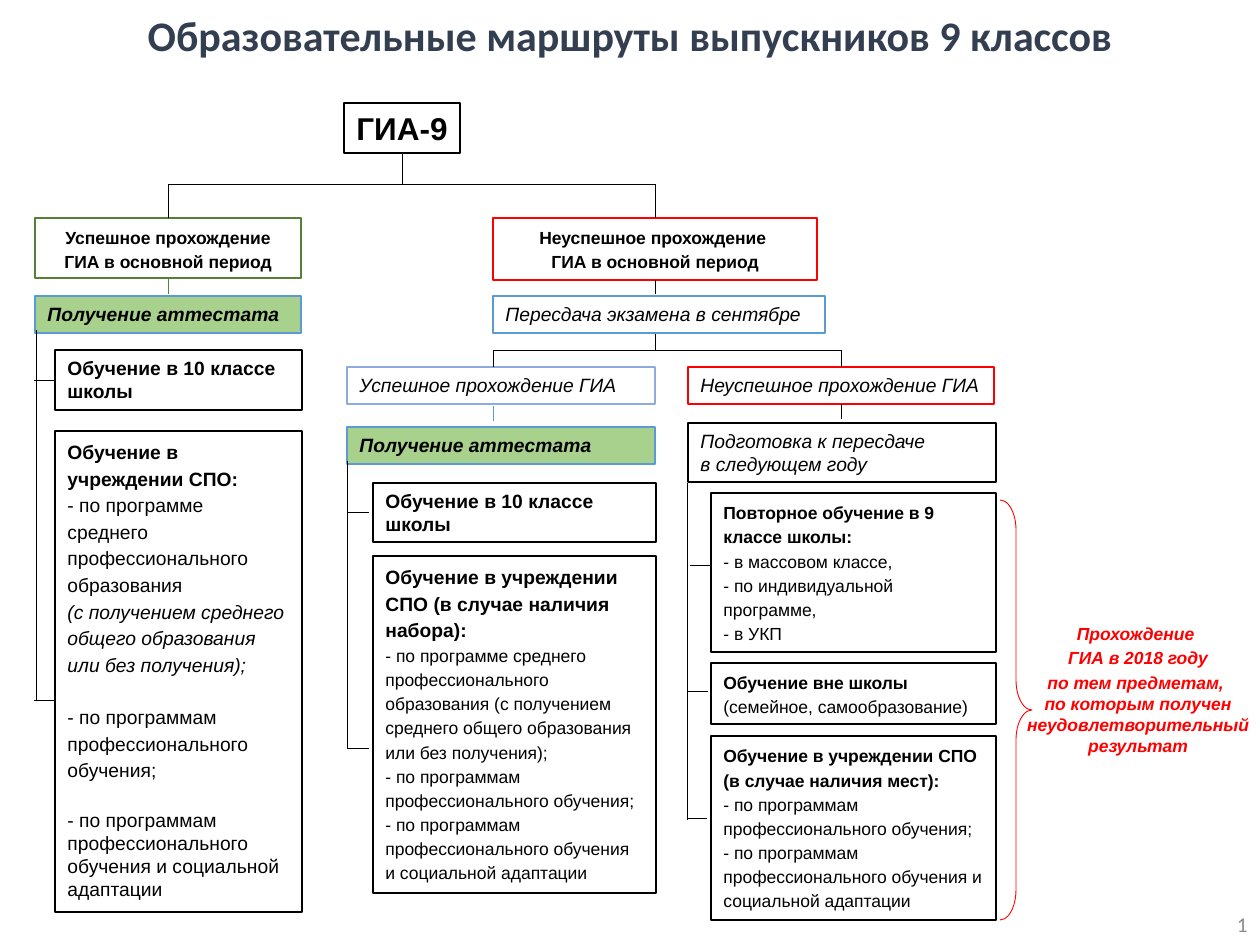
from typing import NamedTuple

from lxml.etree import SubElement
from pptx import Presentation
from pptx.dml.color import RGBColor
from pptx.enum.shapes import MSO_CONNECTOR, MSO_SHAPE
from pptx.enum.text import MSO_ANCHOR, MSO_AUTO_SIZE, PP_ALIGN
from pptx.oxml.ns import qn
from pptx.util import Emu, Pt

BLACK = RGBColor(0, 0, 0)
RED = RGBColor(0xFF, 0, 0)
GREEN = RGBColor(0x54, 0x82, 0x35)
LIGHT_GREEN = RGBColor(0xA9, 0xD1, 0x8E)
BLUE = RGBColor(0x5B, 0x9B, 0xD5)
PALE_BLUE = RGBColor(0x8F, 0xAA, 0xDC)
NAVY = RGBColor(0x33, 0x3F, 0x50)
GREY = RGBColor(0x8C, 0x8C, 0x8C)
TOP, LEFT, BOTTOM = 0, 1, 2
LOOSE = 1.15


class Para(NamedTuple):
    text: str
    style: str = ""  # b = bold, i = italic
    size: int = 10
    spacing: float = LOOSE
    before: int = 0


class Box(NamedTuple):
    place: tuple  # left, top, width, height in px
    paras: list
    line: RGBColor = BLACK
    fill: RGBColor = None
    align: PP_ALIGN = PP_ALIGN.LEFT
    wrap: bool = True


# Content
TITLE = "Образовательные маршруты выпускников 9 классов"
CERTIFICATE = [Para("Получение аттестата", "bi", 11, 1)]
GRADE_10 = [Para("Обучение в 10 классе школы", "b", 11, 1)]
TRAINING = "- по программам профессионального обучения;"
ADAPTATION = "- по программам профессионального обучения и социальной адаптации"

BOXES = {
    "exam": Box((344, 103, 116, 50), [Para("ГИА-9", "b", 18, 1)], wrap=False),
    "passed": Box((35, 218, 266, 60), [
        Para("Успешное прохождение ГИА в основной период", "b")],
        GREEN, align=PP_ALIGN.CENTER),
    "failed": Box((493, 218, 324, 62), [
        Para("Неуспешное прохождение \nГИА в основной период", "b")],
        RED, align=PP_ALIGN.CENTER),
    "certificate": Box((35, 296, 266, 37), CERTIFICATE, BLUE, LIGHT_GREEN),
    "retake": Box((493, 296, 332, 37), [
        Para("Пересдача экзамена в сентябре", "i", 11, 1)], BLUE, wrap=False),
    "grade 10": Box((55, 350, 247, 60), GRADE_10),
    "college": Box((55, 431, 247, 481), [
        Para("Обучение в учреждении СПО:", "b", 11),
        Para("- по программе среднего профессионального образования", "", 11),
        Para("(с получением среднего общего образования или без получения);", "i", 11),
        Para(TRAINING, "", 11, before=15),
        Para(ADAPTATION, "", 11, 1, 15)]),
    "retake passed": Box((347, 367, 308, 37), [
        Para("Успешное прохождение ГИА", "i", 11, 1)], PALE_BLUE),
    "retake failed": Box((688, 367, 306, 37), [
        Para("Неуспешное прохождение ГИА", "i", 11, 1)], RED, wrap=False),
    "retake certificate": Box((347, 427, 308, 37), CERTIFICATE, BLUE, LIGHT_GREEN),
    "preparation": Box((688, 423, 308, 59), [
        Para("Подготовка к пересдаче \nв следующем году", "i", 11, 1)]),
    "retake grade 10": Box((373, 483, 283, 59), GRADE_10),
    "retake college": Box((373, 556, 283, 337), [
        Para("Обучение в учреждении СПО (в случае наличия набора):", "b", 11),
        Para("- по программе среднего профессионального образования "
             "(с получением среднего общего образования или без получения);"),
        Para(TRAINING), Para(ADAPTATION)]),
    "repeat year": Box((711, 493, 285, 159), [
        Para("Повторное обучение в 9 классе школы:", "b"),
        Para("- в массовом классе,"),
        Para("- по индивидуальной программе,"),
        Para("- в УКП")]),
    "home study": Box((711, 663, 285, 61), [
        Para("Обучение вне школы", "b"),
        Para("(семейное, самообразование)")]),
    "failed college": Box((711, 736, 285, 184), [
        Para("Обучение в учреждении СПО", "b"),
        Para("(в случае наличия мест):", "b"),
        Para(TRAINING), Para(ADAPTATION)]),
}

NOTE = [Para("Прохождение \nГИА в 2018 году", "bi"),
        Para("по тем предметам, ", "bi"),
        Para("по которым получен неудовлетворительный результат", "bi", spacing=1)]

# Links: start, end, colour; an end is a point in px or (box, side)
LINKS = [
    (("exam", BOTTOM), (402, 184), BLACK),
    ((168, 184), (655, 184), BLACK),
    ((168, 184), ("passed", TOP), BLACK),
    ((655, 184), ("failed", TOP), BLACK),
    (("passed", BOTTOM), (168, 294), GREEN),
    (("failed", BOTTOM), (655, 294), BLACK),
    ((655, 334), (655, 350), BLACK),
    ((493, 350), (841, 350), BLACK),
    ((493, 350), (493, 367), BLACK),
    ((841, 350), ("retake failed", TOP), BLACK),
    ((493, 406), (493, 421), BLUE),
    (("retake failed", BOTTOM), (841, 419), BLACK),
    (("grade 10", LEFT), (34, 380), BLACK),
]
# Trunks: x, top, bottom, branches as (y, left, right)
TRUNKS = [
    (36, 330, 700, [(700, 34, 55)]),
    (347, 461, 749, [(512, 347, 369), (748, 347, 369)]),
    (687, 483, 820, [(565, 690, 711), (691, 688, 708), (818, 687, 707)]),
]
for x, top, bottom, branches in TRUNKS:
    LINKS.append(((x, top), (x, bottom), BLACK))
    LINKS += [((right, y), (left, y), BLACK) for y, left, right in branches]


def px(value):
    return Emu(round(value * 914400 / 126))


def write(frame, paras, color, align, font="Arial"):
    frame.auto_size = MSO_AUTO_SIZE.NONE
    for index, para in enumerate(paras):
        paragraph = frame.add_paragraph() if index else frame.paragraphs[0]
        paragraph.text = para.text
        paragraph.alignment = align
        paragraph.line_spacing = para.spacing
        paragraph.space_before = Pt(para.before)
        paragraph.font.name = font
        paragraph.font.size = Pt(para.size)
        paragraph.font.bold = "b" in para.style
        paragraph.font.italic = "i" in para.style
        paragraph.font.color.rgb = color


def add_outlined(slide, preset, place, line, width, fill=None):
    shape = slide.shapes.add_shape(preset, *map(px, place))
    shape.shadow.inherit = False
    shape.line.color.rgb = line
    shape.line.width = Pt(width)
    if fill is None:
        shape.fill.background()
    else:
        shape.fill.solid()
        shape.fill.fore_color.rgb = fill
    return shape


def add_box(slide, box):
    shape = add_outlined(slide, MSO_SHAPE.RECTANGLE, box.place, box.line, 0.75, box.fill)
    frame = shape.text_frame
    frame.word_wrap = box.wrap
    frame.vertical_anchor = MSO_ANCHOR.TOP
    write(frame, box.paras, BLACK, box.align)
    return shape


def add_link(slide, shapes, start, end, color):
    def point(anchor):
        return (0, 0) if anchor[0] in shapes else anchor

    link = slide.shapes.add_connector(
        MSO_CONNECTOR.STRAIGHT, *map(px, point(start) + point(end)))
    link.line.color.rgb = color
    link.line.width = Pt(0.5)
    SubElement(link.element.spPr, qn("a:effectLst"))
    for anchor, connect in ((start, link.begin_connect), (end, link.end_connect)):
        if anchor[0] in shapes:
            connect(shapes[anchor[0]], anchor[1])


def add_text(slide, place, paras, color, align, font="Arial"):
    frame = slide.shapes.add_textbox(*map(px, place)).text_frame
    frame.word_wrap = True
    write(frame, paras, color, align, font)
    return frame


def main():
    deck = Presentation()
    deck.slide_width, deck.slide_height = px(1260), px(945)
    slide = deck.slides.add_slide(deck.slide_layouts[5])

    # Title and page number
    title = slide.shapes.title
    title.left, title.top, title.width, title.height = map(px, (0, 0, 1260, 64))
    title.text_frame.vertical_anchor = MSO_ANCHOR.TOP
    write(title.text_frame, [Para(TITLE, "b", 24, 1.07)], NAVY, PP_ALIGN.CENTER, "Calibri")
    number = add_text(slide, (976, 899, 284, 50), [Para("1", "", 12, 1)],
                      GREY, PP_ALIGN.RIGHT, "Calibri")
    number.vertical_anchor = MSO_ANCHOR.MIDDLE

    # Route boxes and links
    shapes = {key: add_box(slide, box) for key, box in BOXES.items()}
    for start, end, color in LINKS:
        add_link(slide, shapes, start, end, color)

    # Note and its brace
    note = add_text(slide, (1016, 614, 244, 150), NOTE, RED, PP_ALIGN.CENTER)
    note.margin_left = note.margin_right = 0
    brace = add_outlined(slide, MSO_SHAPE.RIGHT_BRACE, (1000, 500, 32, 420), RED, 0.5)
    brace.adjustments[0] = 0.94

    deck.save("out.pptx")


if __name__ == "__main__":
    main()
